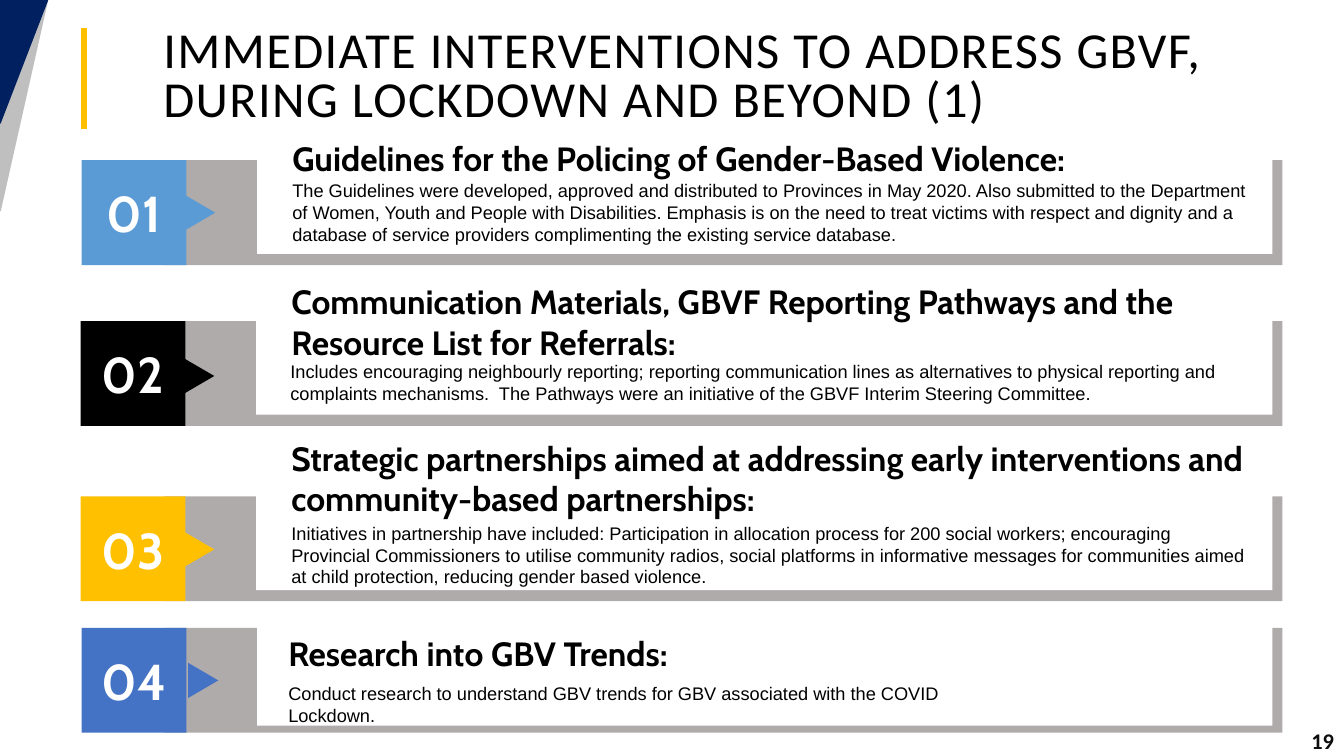
import pptx
import pptx.util
import pptx.dml.color
import pptx.enum.shapes
import pptx.enum.text
import pptx.oxml.ns
import lxml.etree

Inches, Pt = pptx.util.Inches, pptx.util.Pt
RGBColor = pptx.dml.color.RGBColor
Shape = pptx.enum.shapes.MSO_SHAPE
Anchor = pptx.enum.text.MSO_ANCHOR
Align = pptx.enum.text.PP_ALIGN
qn = pptx.oxml.ns.qn

BLACK = RGBColor(0x00, 0x00, 0x00)
WHITE = RGBColor(0xFF, 0xFF, 0xFF)
INK = RGBColor(0x0D, 0x0D, 0x0D)
GREY = RGBColor(0xAF, 0xAB, 0xAB)
SILVER = RGBColor(0xBF, 0xBF, 0xBF)
NAVY = RGBColor(0x00, 0x20, 0x60)
GOLD = RGBColor(0xFF, 0xC0, 0x00)
SKY = RGBColor(0x5B, 0x9B, 0xD5)
BLUE = RGBColor(0x44, 0x72, 0xC4)

# Content
TITLE = "IMMEDIATE INTERVENTIONS TO ADDRESS GBVF, DURING LOCKDOWN AND BEYOND (1)"
PAGE_NUMBER = "19"
INTERVENTIONS = [
    dict(colour=SKY, heading="Guidelines for the Policing of Gender-Based Violence:",
         detail="The Guidelines were developed, approved and distributed to Provinces in May 2020. "
                "Also submitted to the Department of Women, Youth and People with Disabilities. "
                "Emphasis is on the need to treat victims with respect and dignity and a database "
                "of service providers complimenting the existing service database.",
         top=1.59, left=0.81, lift=0.11, arrow=(1.81, 1.96),
         heading_box=(2.9, 1.32, 9.5, 0.5), detail_box=(2.9, 1.73, 9.57, 0.76)),
    dict(colour=BLACK,
         heading="Communication Materials, GBVF Reporting Pathways and the Resource List for Referrals:",
         detail="Includes encouraging neighbourly reporting; reporting communication lines as "
                "alternatives to physical reporting and  complaints mechanisms.  The Pathways were "
                "an initiative of the GBVF Interim Steering Committee.",
         top=3.185, left=0.8, lift=0.11, arrow=(1.8, 3.58),
         heading_box=(2.89, 2.73, 9.59, 0.91), detail_box=(2.88, 3.53, 9.59, 0.54)),
    dict(colour=GOLD,
         heading="Strategic partnerships aimed at addressing early interventions and "
                 "community-based partnerships:",
         detail="Initiatives in partnership have included: Participation in allocation process for "
                "200 social workers; encouraging Provincial Commissioners to utilise community "
                "radios, social platforms in informative messages for communities aimed at child "
                "protection, reducing gender based violence.",
         top=4.925, left=0.8, lift=0.11, arrow=(1.8, 5.3),
         heading_box=(2.89, 4.28, 9.6, 0.91), detail_box=(2.89, 5.13, 9.52, 0.76)),
    dict(colour=BLUE, heading="Research into GBV Trends:",
         detail="Conduct research to understand GBV trends for GBV associated with the COVID Lockdown.",
         top=6.23, left=0.81, lift=0.07, arrow=(1.84, 6.6),
         heading_box=(2.86, 6.23, 4.8, 0.5), detail_box=(2.86, 6.72, 6.83, 0.54)),
]

# Shared measures, in inches
BAND = 1.04
BAND_LEFT, BAND_RIGHT = 1.63, 12.72
PANEL_OFFSET, PANEL_RIGHT = 1.74, 12.62
ARROW_SIZE = (0.35, 0.3)

deck = pptx.Presentation()
deck.slide_width, deck.slide_height = Inches(13.33), Inches(7.5)
slide = deck.slides.add_slide(deck.slide_layouts[5])


def add_block(kind, box, colour, outline=None):
    block = slide.shapes.add_shape(kind, *map(Inches, box))
    block.shadow.inherit = False
    block.fill.solid()
    block.fill.fore_color.rgb = colour
    if outline:
        block.line.color.rgb = colour
        block.line.width = Pt(outline)
    else:
        block.line.fill.background()
    return block


def write(holder, text, size, font, colour, bold=False, align=Align.LEFT,
          anchor=Anchor.TOP, insets=(0.1, 0.05, 0.1, 0.05)):
    frame = holder.text_frame
    frame.word_wrap = True
    frame.vertical_anchor = anchor
    (frame.margin_left, frame.margin_top,
     frame.margin_right, frame.margin_bottom) = map(Inches, insets)
    frame.text = text
    paragraph = frame.paragraphs[0]
    paragraph.alignment = align
    run = paragraph.runs[0]
    run.font.size, run.font.name, run.font.bold = Pt(size), font, bold
    run.font.color.rgb = colour
    return paragraph


def add_text(box, *args, **style):
    write(slide.shapes.add_textbox(*map(Inches, box)), *args, **style)


# Corner triangles and the rule beside the title
for depth, colour in ((2.09, SILVER), (1.22, NAVY)):
    corner = add_block(Shape.RIGHT_TRIANGLE, (0, 0, 0.47, depth), colour, outline=1.25)
    corner._element.spPr.find(qn("a:xfrm")).set("flipV", "1")

title_rule = slide.shapes.add_connector(
    pptx.enum.shapes.MSO_CONNECTOR.STRAIGHT, *map(Inches, (0.83, 1.28, 0.83, 0.28)))
title_rule.line.color.rgb = GOLD
title_rule.line.width = Pt(4.5)
lxml.etree.SubElement(title_rule._element.spPr, qn("a:effectLst"))

# Title
title = slide.shapes.title
title.left, title.top, title.width, title.height = map(Inches, (1.13, 0.38, 11.8, 0.8))
heading_line = write(title, TITLE, 36, "Calibri", BLACK, anchor=Anchor.MIDDLE)
title.text_frame.auto_size = pptx.enum.text.MSO_AUTO_SIZE.NONE
heading_line.line_spacing = 0.8
heading_line._p.get_or_add_pPr().set("marL", str(Inches(0.39)))
heading_line._p.get_or_add_pPr().set("indent", "0")
heading_line.runs[0]._r.get_or_add_rPr().set("spc", "100")

# Numbered interventions
for number, item in enumerate(INTERVENTIONS, 1):
    top, left = item["top"], item["left"]
    panel_left = left + PANEL_OFFSET
    add_block(Shape.RECTANGLE, (BAND_LEFT, top, BAND_RIGHT - BAND_LEFT, BAND), GREY)
    add_block(Shape.RECTANGLE,
              (panel_left, top - item["lift"], PANEL_RIGHT - panel_left, BAND), WHITE)
    badge = add_block(Shape.RECTANGLE, (left, top, BAND, BAND), item["colour"])
    write(badge, f"{number:02d}", 36, "Cabin", WHITE, bold=True, align=Align.CENTER,
          anchor=Anchor.MIDDLE, insets=(0.07, 0.04, 0.07, 0.04))
    arrow = add_block(Shape.ISOSCELES_TRIANGLE, item["arrow"] + ARROW_SIZE, item["colour"])
    arrow.rotation = 90
    add_text(item["heading_box"], item["heading"], 24, "Cabin", BLACK, bold=True,
             anchor=Anchor.BOTTOM, insets=(0, 0.05, 0.1, 0.05))
    add_text(item["detail_box"], item["detail"], 13, "Arial", BLACK,
             insets=(0, 0.05, 0, 0.05))

# Page number
add_text((12.27, 7.2, 1.06, 0.3), PAGE_NUMBER, 16, "Calibri", INK, bold=True,
         align=Align.RIGHT, anchor=Anchor.MIDDLE)

deck.save("out.pptx")
